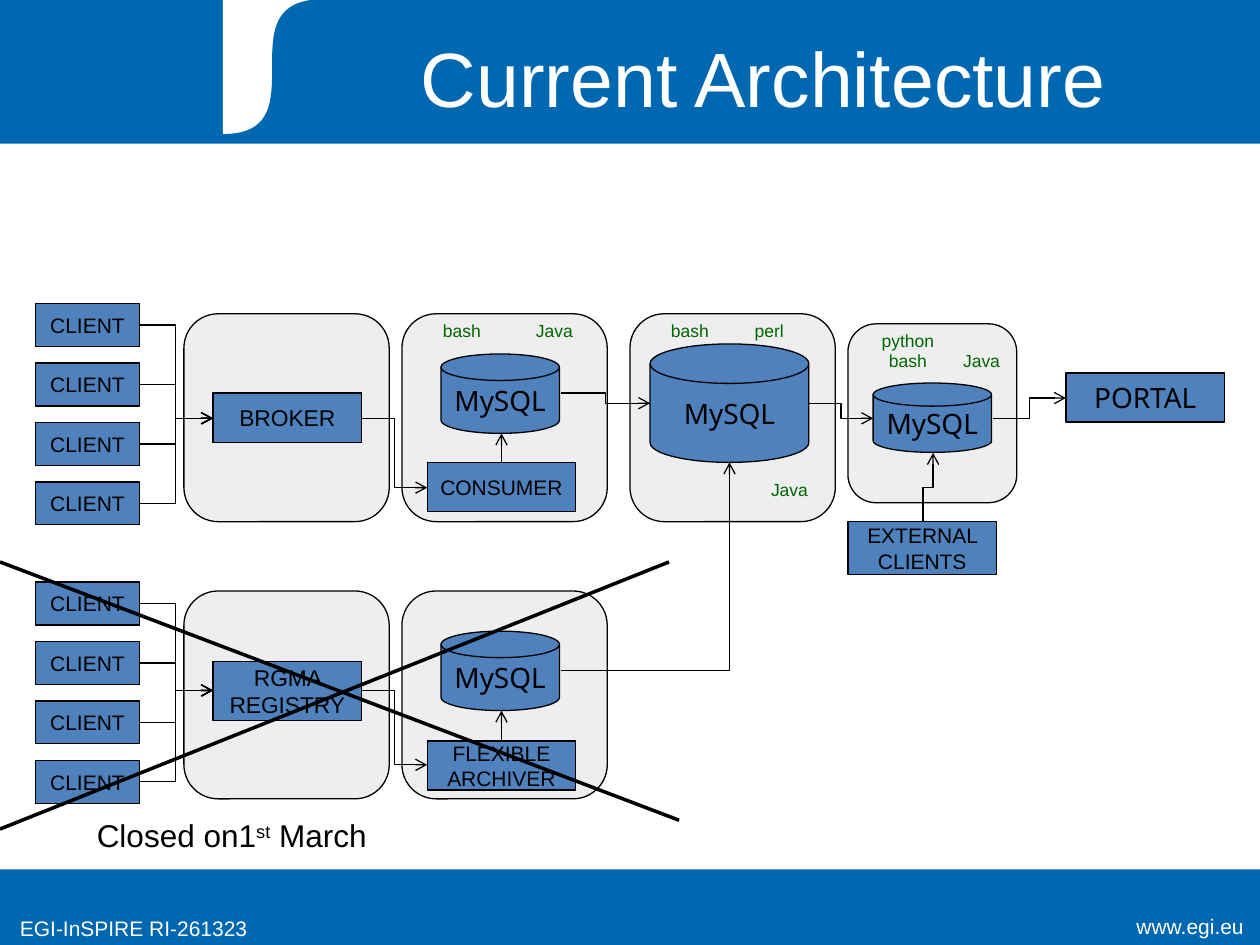
from dataclasses import dataclass

from lxml import etree
from pptx import Presentation
from pptx.dml.color import RGBColor
from pptx.enum.shapes import MSO_CONNECTOR, MSO_SHAPE
from pptx.enum.text import MSO_ANCHOR, PP_ALIGN
from pptx.oxml.ns import qn
from pptx.util import Inches, Pt

RECT, ROUNDED = MSO_SHAPE.RECTANGLE, MSO_SHAPE.ROUNDED_RECTANGLE
DISK = MSO_SHAPE.FLOWCHART_MAGNETIC_DISK
STRAIGHT, ELBOW = MSO_CONNECTOR.STRAIGHT, MSO_CONNECTOR.ELBOW
LEFT, CENTER, RIGHT = PP_ALIGN.LEFT, PP_ALIGN.CENTER, PP_ALIGN.RIGHT
TOP, MIDDLE = MSO_ANCHOR.TOP, MSO_ANCHOR.MIDDLE


@dataclass(frozen=True)
class Theme:
    banner: RGBColor = RGBColor(0x00, 0x67, 0xB1)
    white: RGBColor = RGBColor(0xFF, 0xFF, 0xFF)
    black: RGBColor = RGBColor(0x00, 0x00, 0x00)
    node: RGBColor = RGBColor(0x4F, 0x81, 0xBD)
    host: RGBColor = RGBColor(0xD9, 0xD9, 0xD9)
    language: RGBColor = RGBColor(0x00, 0x66, 0x00)
    host_alpha: int = 44000
    font: str = "Arial"
    disk_font: str = "Noto Sans"
    title: int = 44
    note: int = 18
    database: int = 16
    service: int = 13
    small: int = 12
    label: int = 10
    thin: float = 0.75
    cross: float = 2


THEME = Theme()
prs = Presentation()
prs.slide_width, prs.slide_height = Inches(10), Inches(7.5)
shapes = prs.slides.add_slide(prs.slide_layouts[6]).shapes


def write(shape, text, size, color, font=THEME.font, align=CENTER, anchor=TOP):
    frame = shape.text_frame
    frame.word_wrap = True
    frame.vertical_anchor = anchor
    paragraph = frame.paragraphs[0]
    paragraph.alignment = align
    for part in [text] if isinstance(text, str) else text:
        run = paragraph.add_run()
        run.text = part
        run.font.size = Pt(size)
        run.font.name = font
        run.font.color.rgb = color
    return paragraph


def link(kind, start, end, width=THEME.thin, arrow=True):
    line = shapes.add_connector(kind, *map(Inches, start + end))
    line.line.color.rgb = THEME.black
    line.line.width = Pt(width)
    if arrow:
        etree.SubElement(line.line._get_or_add_ln(), qn("a:tailEnd"), type="arrow")
    etree.SubElement(line._element.spPr, qn("a:effectLst"))
    return line


# Banner, footer bar and the curved emblem panel
for x, y, w, h, color in [
    (0, 6.9, 10, 0.6, THEME.banner),
    (0, 0, 10, 1.14, THEME.banner),
    (1.77, 0, 1.97, 1.07, THEME.white),
]:
    bar = shapes.add_shape(RECT, Inches(x), Inches(y), Inches(w), Inches(h))
    bar.shadow.inherit = False
    bar.fill.solid()
    bar.fill.fore_color.rgb = color
    bar.line.fill.background()

STEPS = 40
curve = []
for step in range(STEPS + 1):
    t = step / STEPS
    weights = ((1 - t) ** 3, 3 * t * (1 - t) ** 2, 3 * t * t * (1 - t), t**3)
    curve.append((
        Inches(sum(k * x for k, x in zip(weights, (1.77, 2.56, 1.77, 2.56)))),
        Inches(sum(k * y for k, y in zip(weights, (1.07, 1.07, 0, 0)))),
    ))
outline = shapes.build_freeform(Inches(3.74), Inches(1.07))
outline.add_line_segments(curve + [(Inches(3.74), 0)], close=True)
swoosh = outline.convert_to_shape()
swoosh.shadow.inherit = False
swoosh.fill.solid()
swoosh.fill.fore_color.rgb = THEME.banner
swoosh.line.color.rgb = THEME.banner
swoosh.line.width = Pt(THEME.thin)

# Title and footer text
for text, x, y, w, h, size, align, anchor in [
    ("www.egi.eu", 8.39, 7.2, 1.58, 0.31, THEME.small, RIGHT, TOP),
    ("EGI-InSPIRE RI-261323", 0.06, 7.22, 2.5, 0.31, THEME.small, LEFT, TOP),
    ("Current Architecture", 2.32, 0.13, 7.48, 0.95, THEME.title, CENTER, MIDDLE),
]:
    box = shapes.add_textbox(Inches(x), Inches(y), Inches(w), Inches(h))
    write(box, text, size, THEME.white, align=align, anchor=anchor)

# Host machines
for x, y, w, h in [
    (3.19, 2.49, 1.63, 1.65), (5, 2.49, 1.63, 1.65), (6.73, 2.57, 1.34, 1.42),
    (1.46, 2.49, 1.63, 1.65), (3.19, 4.69, 1.63, 1.65), (1.46, 4.69, 1.63, 1.65),
]:
    host = shapes.add_shape(ROUNDED, Inches(x), Inches(y), Inches(w), Inches(h))
    host.shadow.inherit = False
    host.fill.solid()
    host.fill.fore_color.rgb = THEME.host
    tint = host._element.spPr.find(qn("a:solidFill"))[0]
    etree.SubElement(tint, qn("a:alpha"), val=str(THEME.host_alpha))
    host.line.color.rgb = THEME.black
    host.line.width = Pt(THEME.thin)

# Databases, services and the two columns of clients
databases = [
    (DISK, "MySQL", 6.93, 3.04, 0.94, 0.55),
    (DISK, "MySQL", 5.16, 2.73, 1.26, 0.94),
    (DISK, "MySQL", 3.5, 2.81, 0.94, 0.63),
    (DISK, "MySQL", 3.5, 5.01, 0.94, 0.63),
    (RECT, "PORTAL", 8.46, 2.96, 1.26, 0.39),
]
hubs = [
    (RECT, "BROKER", 1.69, 3.12, 1.18, 0.39),
    (RECT, "RGMA REGISTRY", 1.69, 5.25, 1.18, 0.47),
]
workers = [
    (RECT, "CONSUMER", 3.39, 3.67, 1.18, 0.39),
    (RECT, "FLEXIBLE ARCHIVER", 3.39, 5.88, 1.18, 0.39),
    (RECT, "EXTERNAL CLIENTS", 6.73, 4.14, 1.18, 0.42),
]
CLIENT_PITCH = 0.472
client_tops = {
    first: [first + CLIENT_PITCH * row for row in range(4)] for first in (2.41, 4.62)
}
clients = [
    (RECT, "CLIENT", 0.28, top, 0.83, 0.34)
    for tops in client_tops.values() for top in tops
]
for group, size, font in [
    (databases, THEME.database, THEME.disk_font),
    (hubs, THEME.service, THEME.font),
    (workers + clients, THEME.small, THEME.font),
]:
    for kind, text, x, y, w, h in group:
        node = shapes.add_shape(kind, Inches(x), Inches(y), Inches(w), Inches(h))
        node.shadow.inherit = False
        node.fill.solid()
        node.fill.fore_color.rgb = THEME.node
        node.line.color.rgb = THEME.black
        node.line.width = Pt(THEME.thin)
        write(node, text, size, THEME.black, font, anchor=MIDDLE)

# Data flow
for tops, hub_y in zip(client_tops.values(), (3.32, 5.48)):
    for top in tops:
        link(ELBOW, (1.1, top + 0.17), (1.69, hub_y))
for kind, start, end in [
    (ELBOW, (2.87, 3.32), (3.39, 3.87)),
    (STRAIGHT, (3.98, 3.67), (3.98, 3.44)),
    (ELBOW, (4.45, 3.12), (5.16, 3.2)),
    (ELBOW, (6.42, 3.2), (6.93, 3.32)),
    (ELBOW, (7.88, 3.32), (8.46, 3.16)),
    (ELBOW, (2.87, 5.48), (3.39, 6.07)),
    (STRAIGHT, (3.98, 5.88), (3.98, 5.64)),
]:
    link(kind, start, end)

# One-bend link from the archive to the central database
archive_link = link(ELBOW, (4.45, 5.32), (5.79, 3.67))
archive_link._element.spPr.find(qn("a:prstGeom")).set("prst", "bentConnector2")

# Upward link from the external clients, turned a quarter so it leaves vertically
external_link = link(ELBOW, (7.64, 3.91), (7.09, 3.83))
external_link._element.spPr.find(qn("a:xfrm")).set("rot", str(90 * 60000))

# Language labels
for text, x, y, w in [
    ("python", 6.81, 2.57, 0.79), ("Java", 5.87, 3.75, 0.79),
    ("perl", 5.71, 2.49, 0.79), ("bash", 5.08, 2.49, 0.79),
    ("bash", 6.81, 2.73, 0.79), ("bash", 3.27, 2.49, 0.79),
    ("Java", 7.52, 2.73, 0.54), ("Java", 4.13, 2.49, 0.54),
]:
    box = shapes.add_textbox(Inches(x), Inches(y), Inches(w), Inches(0.27))
    write(box, text, THEME.label, THEME.language)

# Crossed-out branch and its closing date
link(STRAIGHT, (0, 4.46), (5.39, 6.51), THEME.cross, arrow=False)
link(STRAIGHT, (5.31, 4.46), (0, 6.58), THEME.cross, arrow=False)
closing = shapes.add_textbox(Inches(0.67), Inches(6.43), Inches(3.07), Inches(0.4))
closing_date = write(
    closing, ["Closed on1", "st", " March"], THEME.note, THEME.black, align=LEFT
)
closing_date.runs[1].font._element.set("baseline", "30000")

prs.save("out.pptx")
